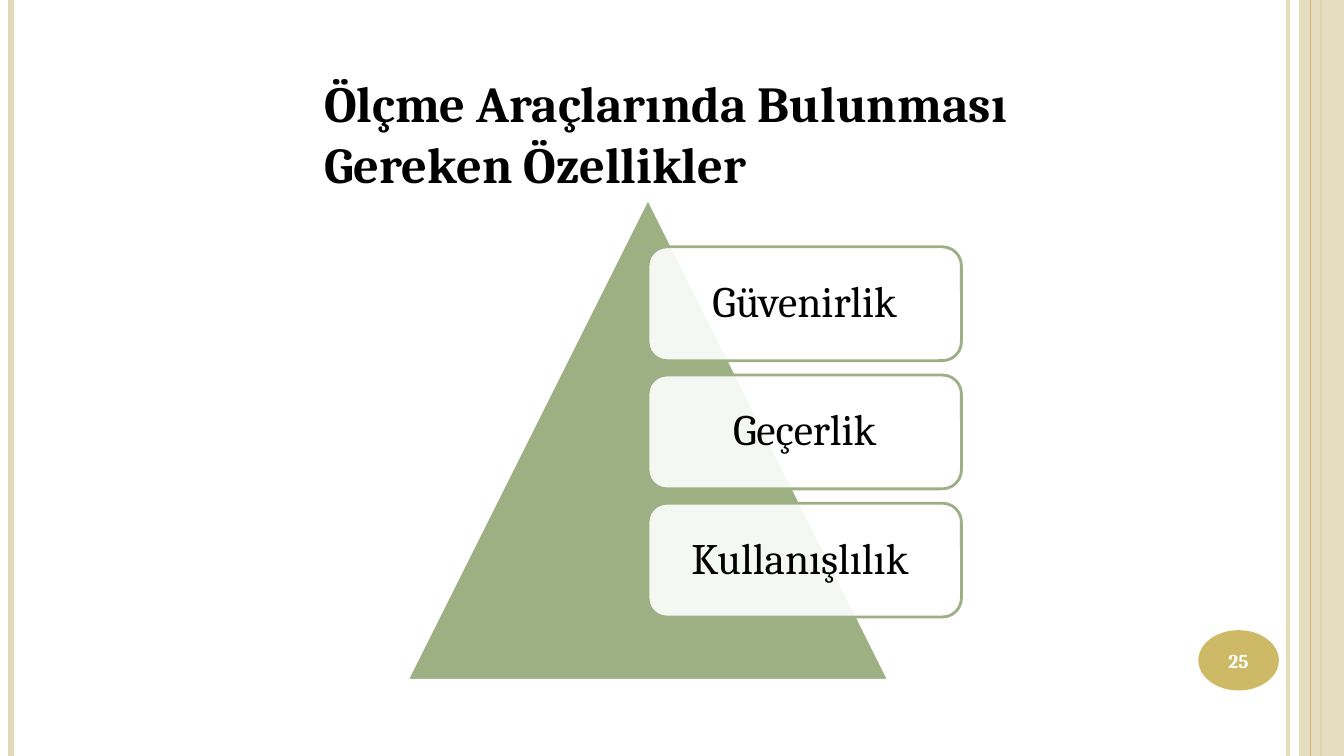
from dataclasses import dataclass

from lxml.etree import SubElement
from pptx import Presentation
from pptx.dml.color import RGBColor
from pptx.enum.shapes import MSO_CONNECTOR, MSO_SHAPE
from pptx.enum.text import MSO_ANCHOR, PP_ALIGN
from pptx.oxml.ns import qn
from pptx.util import Cm, Pt

WIDTH, HEIGHT = 33.87, 19.05
FONT = "Cambria"
WHITE, BLACK = "FFFFFF", "000000"
GREEN, GOLD, SAND = "9CB084", "CEB966", "E3D9B8"

CARD_LABELS = ["Güvenirlik", "Geçerlik", "Kullanışlılık "]
CARD_LEFT, CARD_TOP, CARD_WIDTH, CARD_HEIGHT = 16.33, 6.22, 7.9, 2.87
CARD_STEP = 3.23


@dataclass
class Stripe:
    x: float
    color: str
    weight: float
    opacity: int = 100


@dataclass
class Frame:
    left: float
    top: float
    width: float
    height: float

    def lengths(self) -> list:
        return [Cm(self.left), Cm(self.top), Cm(self.width), Cm(self.height)]


STRIPES_BEHIND = [
    Stripe(32.46, SAND, 3, 93),
    Stripe(0.28, SAND, 4.5),
    Stripe(33.3, GOLD, 1.5),
]
STRIPE_IN_FRONT = Stripe(33.02, GOLD, 0.75)


def paint(fill, color: str, opacity: int = 100) -> None:
    fill.solid()
    fill.fore_color.rgb = RGBColor.from_string(color)
    if opacity < 100:
        # python-pptx has no public setting for transparency
        color_element = fill._xPr.find(qn("a:solidFill"))[0]
        SubElement(color_element, qn("a:alpha")).set("val", str(opacity * 1000))


def add_stripe(page, stripe: Stripe) -> None:
    """Draw a vertical line over the full height of the page."""
    x = Cm(stripe.x)
    line = page.shapes.add_connector(MSO_CONNECTOR.STRAIGHT, x, 0, x, Cm(HEIGHT))
    line.line.width = Pt(stripe.weight)
    paint(line.line.fill, stripe.color, stripe.opacity)
    SubElement(line._element.spPr, qn("a:effectLst"))


def add_figure(page, kind, frame: Frame, fill: str, *, opacity: int = 100,
               outline: str = "", weight: float = 2):
    figure = page.shapes.add_shape(kind, *frame.lengths())
    figure.shadow.inherit = False
    paint(figure.fill, fill, opacity)
    if outline:
        paint(figure.line.fill, outline)
        figure.line.width = Pt(weight)
    else:
        figure.line.fill.background()
    return figure


def write(box, text: str, *, size: float, color: str = BLACK, bold: bool = False,
          align=PP_ALIGN.CENTER, anchor=MSO_ANCHOR.MIDDLE, inset: float = 0,
          wrap: bool = True, spacing: float = 1.0) -> None:
    frame = box.text_frame
    frame.word_wrap = wrap
    frame.vertical_anchor = anchor
    frame.margin_left = frame.margin_right = Cm(inset)
    frame.margin_top = frame.margin_bottom = Cm(min(inset, 0.33))
    para = frame.paragraphs[0]
    para.alignment = align
    para.line_spacing = spacing
    span = para.add_run()
    span.text = text
    span.font.name = FONT
    span.font.size = Pt(size)
    span.font.bold = bold
    span.font.color.rgb = RGBColor.from_string(color)


def add_page_number(page, number: str) -> None:
    badge = add_figure(page, MSO_SHAPE.OVAL, Frame(30.2, 15.88, 2.03, 1.52), GOLD)
    write(badge, number, size=14, color=WHITE, bold=True, wrap=False)


def add_pyramid(page) -> None:
    """Draw the triangle with its column of cards."""
    add_figure(page, MSO_SHAPE.ISOSCELES_TRIANGLE, Frame(10.26, 5, 12.14, 12.14),
               GREEN, outline=WHITE)
    for index, label in enumerate(CARD_LABELS):
        place = Frame(CARD_LEFT, CARD_TOP + index * CARD_STEP, CARD_WIDTH, CARD_HEIGHT)
        card = add_figure(page, MSO_SHAPE.ROUNDED_RECTANGLE, place, WHITE,
                          opacity=90, outline=GREEN)
        write(card, label, size=31, inset=0.33, spacing=0.9)


def add_title(page, text: str) -> None:
    box = page.shapes.add_textbox(*Frame(7.92, 1.7, 20.6, 3.33).lengths())
    write(box, text, size=36, bold=True, align=PP_ALIGN.LEFT,
          anchor=MSO_ANCHOR.TOP, inset=0.25)
    box.text_frame.margin_top = box.text_frame.margin_bottom = Cm(0.13)


def main() -> None:
    deck = Presentation()
    deck.slide_width, deck.slide_height = Cm(WIDTH), Cm(HEIGHT)
    page = deck.slides.add_slide(deck.slide_layouts[6])
    for stripe in STRIPES_BEHIND:
        add_stripe(page, stripe)
    add_figure(page, MSO_SHAPE.RECTANGLE, Frame(32.74, 0, 1.13, HEIGHT), SAND, opacity=87)
    add_stripe(page, STRIPE_IN_FRONT)
    add_page_number(page, "25")
    add_pyramid(page)
    add_title(page, "Ölçme Araçlarında Bulunması Gereken Özellikler")
    deck.save("out.pptx")


if __name__ == "__main__":
    main()
